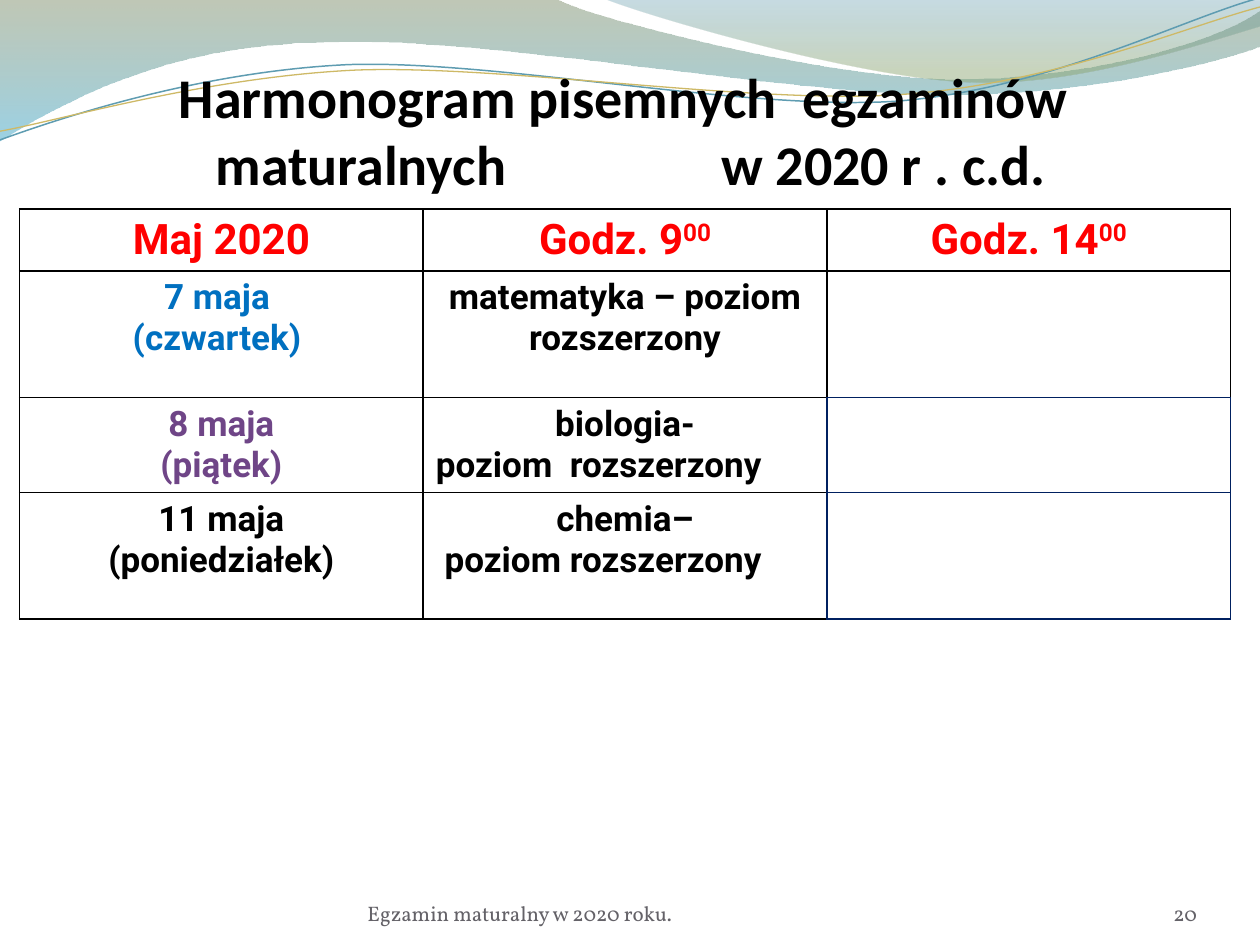
from lxml import etree
from pptx import Presentation, util as u
from pptx.dml.color import RGBColor
from pptx.enum import text as t
from pptx.oxml import parse_xml
from pptx.oxml.ns import nsdecls, qn

HUES = {
    "black": "000000", "white": "FFFFFF", "red": "FF0000", "blue": "0070C0",
    "plum": "6F4587", "navy": "002060", "grey": "646268", "moss": "74855E",
    "sky": "4AACCE", "teal": "45889F", "leaf": "8AA36D", "wave": "5E9CB1",
    "gold": "CEB966",
}
MID, LEFT, RIGHT = t.PP_ALIGN.CENTER, t.PP_ALIGN.LEFT, t.PP_ALIGN.RIGHT


class Deck:
    """Holds the style and the current slide, and draws each kind of element."""

    def __init__(self, wide, high):
        self.file = Presentation()
        self.file.slide_width, self.file.slide_height = u.Pt(wide), u.Pt(high)
        self.slide = self.file.slides.add_slide(self.file.slide_layouts[5])
        self.head = {"name": "Calibri", "size": u.Pt(32), "bold": True}
        self.top = {"name": "Roboto", "size": u.Pt(24), "bold": True}
        self.body = {"name": "Roboto", "size": u.Pt(20), "bold": True}
        self.foot = {"name": "Vollkorn", "size": u.Pt(12), "bold": False}

    def hue(self, key):
        return RGBColor.from_string(HUES[key])

    def run(self, para, words, style, key):
        run = para.add_run()
        run.text = words
        for name, value in style.items():
            setattr(run.font, name, value)
        run.font.color.rgb = self.hue(key)
        return run

    def indent(self, para, **sides):
        for side, value in sides.items():
            para._p.get_or_add_pPr().set(side, str(u.Pt(value)))

    def frame(self, box, place, inset=0):
        for name, value in zip(("left", "top", "width", "height"), place):
            setattr(box, name, u.Pt(value))
        form = {"margin_left": 0, "margin_right": 0, "margin_bottom": 0,
                "margin_top": u.Pt(inset), "word_wrap": True,
                "auto_size": t.MSO_AUTO_SIZE.NONE,
                "vertical_anchor": t.MSO_ANCHOR.BOTTOM}
        for name, value in form.items():
            setattr(box.text_frame, name, value)
        return box.text_frame

    def title(self, first, second, stops, place):
        box = self.slide.shapes.title
        box.element.getparent().append(box.element)
        frame = self.frame(box, place, 3.6)
        para, last = frame.paragraphs[0], frame.add_paragraph()
        para.alignment, last.alignment = MID, LEFT
        for item in (para, last):
            item.space_before = u.Pt(0)
        self.indent(para, marR=8)
        tabs = etree.SubElement(last._p.get_or_add_pPr(), qn("a:tabLst"))
        for stop in stops:
            etree.SubElement(tabs, qn("a:tab"), pos=str(u.Pt(stop)), algn="l")
        self.run(para, first, self.head, "black")
        self.run(last, second, self.head, "black")

    def label(self, words, place, align=LEFT):
        box = self.slide.shapes.add_textbox(0, 0, 0, 0)
        para = self.frame(box, place).paragraphs[0]
        para.alignment = align
        self.run(para, words, self.foot, "grey")

    def curve(self, start, parts, close):
        dots = [(u.Pt(x), u.Pt(y)) for part in parts
                for x, y in zip(part[::2], part[1::2])]
        build = self.slide.shapes.build_freeform(*map(u.Pt, start))
        build.add_line_segments(dots, close=close)
        shape = build.convert_to_shape()
        shape.shadow.inherit = False
        legs = iter(list(shape.element.iter(qn("a:lnTo"))))
        for part in parts:
            leg = next(legs)
            if len(part) == 6:
                leg.tag = qn("a:cubicBezTo")
                for other in (next(legs), next(legs)):
                    leg.append(other[0])
                    other.getparent().remove(other)
        return shape

    def band(self, start, parts, stops):
        shape = self.curve(start, parts, True)
        shape.line.fill.background()
        marks = "".join(
            f'<a:gs pos="{at * 1000}"><a:srgbClr val="{HUES[key]}">'
            f'<a:alpha val="{alpha * 1000}"/></a:srgbClr></a:gs>'
            for at, key, alpha in stops)
        fill = parse_xml(
            f'<a:gradFill {nsdecls("a")}><a:gsLst>{marks}</a:gsLst>'
            '<a:lin ang="5400000" scaled="0"/></a:gradFill>')
        shape.element.spPr.find(qn("a:custGeom")).addnext(fill)

    def thread(self, start, parts, key, width):
        shape = self.curve(start, parts, False)
        shape.rotation = 357.3
        shape.fill.background()
        shape.line.color.rgb = self.hue(key)
        shape.line.width = u.Pt(width)

    def edge(self, cell, keys):
        props = cell._tc.get_or_add_tcPr()
        for spot, (side, key) in enumerate(zip("LRTB", keys)):
            props.insert(spot, parse_xml(
                f'<a:ln{side} {nsdecls("a")} w="{u.Pt(1)}"><a:solidFill>'
                f'<a:srgbClr val="{HUES[key]}"/></a:solidFill></a:ln{side}>'))

    def table(self, rows, place, highs):
        cols = len(rows[0])
        grid = self.slide.shapes.add_table(
            len(rows), cols, *map(u.Pt, place)).table
        grid.first_row = grid.horz_banding = False
        for row, high in zip(grid.rows, highs):
            row.height = u.Pt(high)
        for r, row in enumerate(rows):
            for c, lines in enumerate(row):
                cell = grid.cell(r, c)
                if r == len(rows) - 1:
                    cell.fill.solid()
                    cell.fill.fore_color.rgb = self.hue("white")
                else:
                    cell.fill.background()
                self.fill(cell, lines, self.body if r else self.top)
                keys = ["black"] * 4
                if c == 2 and r > 1:
                    keys = ["navy"] * 4
                elif c == 2 and r == 1:
                    keys[3] = "navy"
                elif c == 1 and r > 1:
                    keys[1] = "navy"
                self.edge(cell, keys)

    def fill(self, cell, lines, style):
        frame = cell.text_frame
        for n, (words, key, align, *rest) in enumerate(lines):
            para = frame.add_paragraph() if n else frame.paragraphs[0]
            para.alignment = align
            self.run(para, words, style, key)
            for extra in rest:
                if isinstance(extra, str):
                    run = self.run(para, extra, style, key)
                    run._r.get_or_add_rPr().set("baseline", "30000")
                else:
                    self.indent(para, **extra)


def main():
    deck = Deck(720, 540)
    deck.band((0, -1), [
        (317, -1), (343, 12, 478, 45, 546, 45), (614, 45, 690, 27, 720, 6),
        (721, 26), (708, 32, 626, 55, 537, 54), (448, 54, 275, 20, 185, 24),
        (93, 25, 33, 60, -1, 81)], [(0, "moss", 45), (100, "sky", 55)])
    deck.band((345, -1), [
        (366, 8, 491, 45, 554, 47), (616, 50, 692, 23, 720, 15), (720, 0)],
        [(0, "teal", 30), (80, "leaf", 45)])
    deck.thread((-1.4, 63), [
        (34, 52, 114, 29.4, 199, 29.4), (284, 30.4, 426, 67, 512, 65),
        (599, 62, 676, 26, 720.6, 16)], "wave", 0.85)
    deck.thread((-1.1, 58), [
        (33, 53.6, 118, 32.6, 204, 32.7), (290, 33.7, 429, 63.3, 515, 61.3),
        (601.5, 59.4, 679, 30, 721.4, 21)], "gold", 0.75)
    deck.title("Harmonogram pisemnych  egzaminów",
               "\tmaturalnych\tw 2020 r . c.d.", (86.5, 375.5),
               (36.7, 37.4, 647.3, 74.9))
    deck.table([
        [[("Maj 2020", "red", MID)], [("Godz. 9", "red", MID, "00")],
         [("Godz. 14", "red", MID, "00")]],
        [[("7 maja", "blue", MID, {"marR": 5}), ("(czwartek)", "blue", MID)],
         [("matematyka – poziom rozszerzony", "black", MID)], []],
        [[("8 maja", "plum", MID), ("(piątek)", "plum", MID)],
         [("biologia-", "black", MID),
          ("poziom  rozszerzony", "black", LEFT)], []],
        [[("11 maja", "black", MID), ("(poniedziałek)", "black", MID)],
         [("chemia–", "black", MID),
          ("poziom rozszerzony", "black", LEFT, {"marL": 5})], []],
    ], (11.2, 119.3, 692, 234.3), (35.3, 72.4, 54.2, 72.4))
    deck.label("20", (624, 500.4, 60, 28.8), RIGHT)
    deck.label("Egzamin maturalny w 2020 roku.", (210, 500.4, 264, 28.8))
    deck.file.save("out.pptx")


if __name__ == "__main__":
    main()
